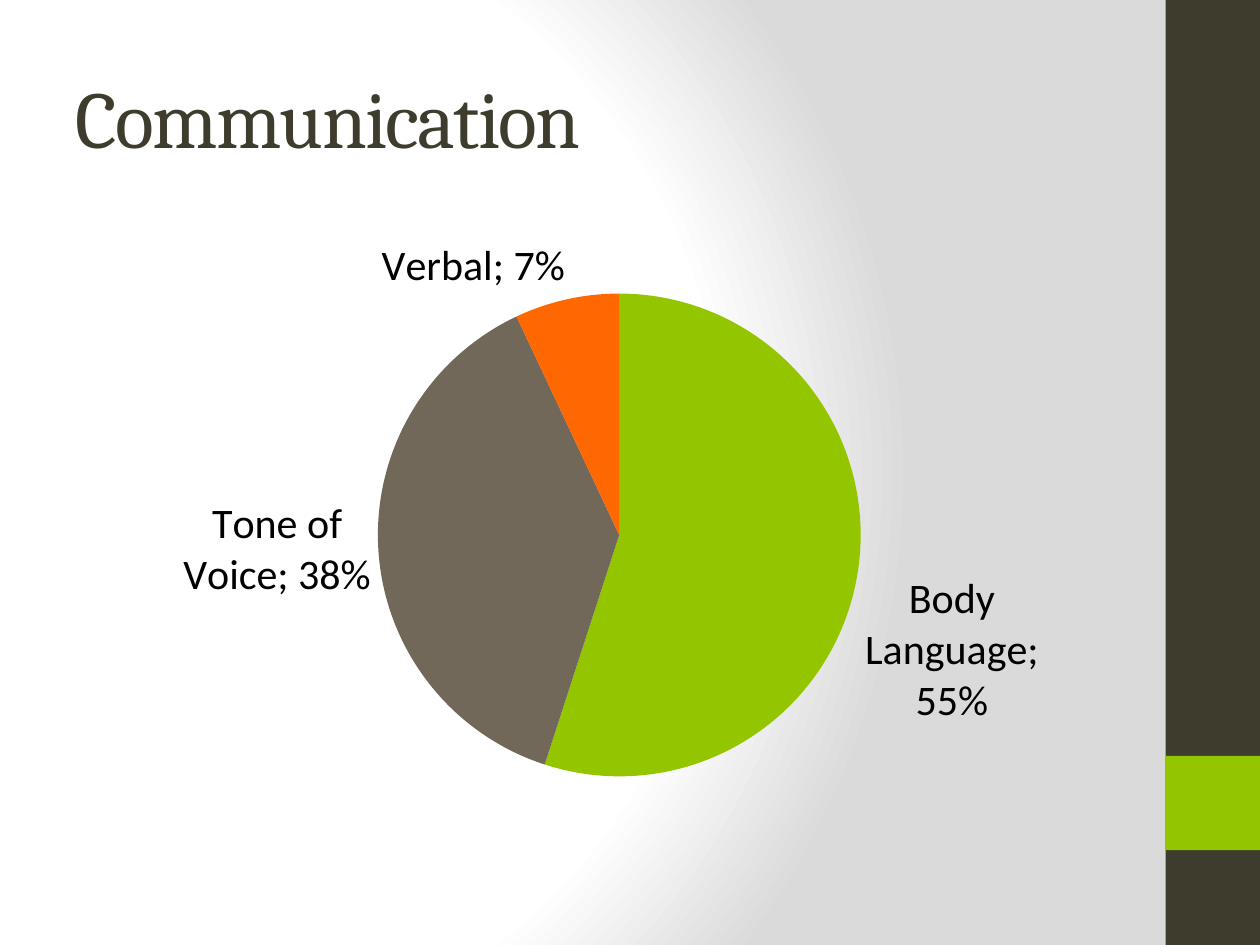
from lxml.etree import SubElement
from pptx import Presentation
from pptx.chart.data import CategoryChartData
from pptx.dml.color import RGBColor
from pptx.enum.chart import XL_CHART_TYPE, XL_LABEL_POSITION
from pptx.enum.shapes import MSO_SHAPE
from pptx.enum.text import MSO_ANCHOR, PP_ALIGN
from pptx.oxml import parse_xml
from pptx.oxml.ns import nsdecls, qn
from pptx.util import Cm, Pt

COLORS = {
    "white": "FFFFFF",
    "mist": "DADADA",
    "dark": "3E3D2D",
    "green": "94C600",
    "taupe": "71685A",
    "orange": "FF6700",
    "black": "000000",
}
HEADING_FONT = "Cambria"
BODY_FONT = "Calibri"
TITLE_ONLY = 5


def color(name):
    return RGBColor.from_string(COLORS[name])


class SlideBuilder:
    def __init__(self, deck):
        self.slide = deck.slides.add_slide(deck.slide_layouts[TITLE_ONLY])

    def background(self, stops, focus):
        """Fill the background with a circular gradient around the focus edges."""
        fill = self.slide.background.fill
        fill.gradient()
        stop_xml = "".join(
            f'<a:gs pos="{position * 1000}"><a:srgbClr val="{COLORS[name]}"/></a:gs>'
            for position, name in stops
        )
        edges = " ".join(f'{side}="{share * 1000}"' for side, share in focus.items())
        gradient = parse_xml(
            f'<a:gradFill {nsdecls("a")} rotWithShape="1"><a:gsLst>{stop_xml}</a:gsLst>'
            f'<a:path path="circle"><a:fillToRect {edges}/></a:path></a:gradFill>'
        )
        previous = next(self.slide.background._cSld.iter(qn("a:gradFill")))
        previous.getparent().replace(previous, gradient)

    def block(self, left, top, width, height, fill):
        box = self.slide.shapes.add_shape(
            MSO_SHAPE.RECTANGLE, Cm(left), Cm(top), Cm(width), Cm(height)
        )
        box.shadow.inherit = False
        box.fill.solid()
        box.fill.fore_color.rgb = color(fill)
        box.line.fill.background()

    def title(self, text, left, top, width, height):
        box = self.slide.shapes.title
        box.left, box.top, box.width, box.height = map(Cm, (left, top, width, height))
        frame = box.text_frame
        frame.text = text
        frame.vertical_anchor = MSO_ANCHOR.MIDDLE
        para = frame.paragraphs[0]
        para.alignment = PP_ALIGN.LEFT
        span = para.runs[0]
        span.font.name = HEADING_FONT
        span.font.size = Pt(46)
        span.font.color.rgb = color("dark")
        span.font._element.set("spc", "-100")

    def pie(self, shares, left, top, width, height, plot_area):
        """Draw shares given as (category, value, colour name)."""
        data = CategoryChartData(number_format="0%")
        data.categories = [category for category, _, _ in shares]
        data.add_series("Series 1", [value for _, value, _ in shares])
        chart = self.slide.shapes.add_chart(
            XL_CHART_TYPE.PIE, Cm(left), Cm(top), Cm(width), Cm(height), data
        ).chart
        chart.has_title = False
        chart.has_legend = False
        chart.font.name = BODY_FONT
        chart.font.size = Pt(18)
        chart.font.color.rgb = color("black")

        plot = chart.plots[0]
        plot.vary_by_categories = True
        for index, (_, _, name) in enumerate(shares):
            fill = plot.series[0].points[index].format.fill
            fill.solid()
            fill.fore_color.rgb = color(name)

        labels = plot.series[0].data_labels
        labels.show_value = True
        labels.show_category_name = True
        labels.show_percentage = False
        labels.number_format = "0%"
        labels.number_format_is_linked = False
        labels.position = XL_LABEL_POSITION.OUTSIDE_END
        labels.font.name = BODY_FONT
        labels.font.size = Pt(24)
        labels.font.color.rgb = color("black")
        self.place_plot(chart, plot_area)

    def place_plot(self, chart, plot_area):
        """Place the plot by fractions of the chart's width and height."""
        area = chart._chartSpace.chart.plotArea
        for layout in area.findall(qn("c:layout")):
            area.remove(layout)
        layout = parse_xml(f'<c:layout {nsdecls("c")}/>')
        area.insert(0, layout)
        manual = SubElement(layout, qn("c:manualLayout"))
        settings = {"layoutTarget": "inner", "xMode": "edge", "yMode": "edge", **plot_area}
        for tag, value in settings.items():
            SubElement(manual, qn(f"c:{tag}")).set("val", str(value))


def main():
    deck = Presentation()
    deck.slide_width, deck.slide_height = Cm(25.4), Cm(19.05)
    builder = SlideBuilder(deck)
    builder.background(
        [(0, "white"), (75, "white"), (100, "mist")],
        {"l": 20, "t": 50, "r": 100, "b": 50},
    )
    builder.block(23.5, 0, 1.9, 19.05, "dark")
    builder.block(23.5, 15.24, 1.9, 1.9, "green")
    builder.title("Communication", 1.27, 0.76, 21.16, 3.18)
    builder.pie(
        [
            ("Body Language", 0.55, "green"),
            ("Tone of Voice", 0.38, "taupe"),
            ("Verbal", 0.07, "orange"),
        ],
        1.27, 4.45, 21.16, 13.34,
        {"x": 0.3, "y": 0.11, "w": 0.46, "h": 0.73},
    )
    deck.save("out.pptx")


if __name__ == "__main__":
    main()
